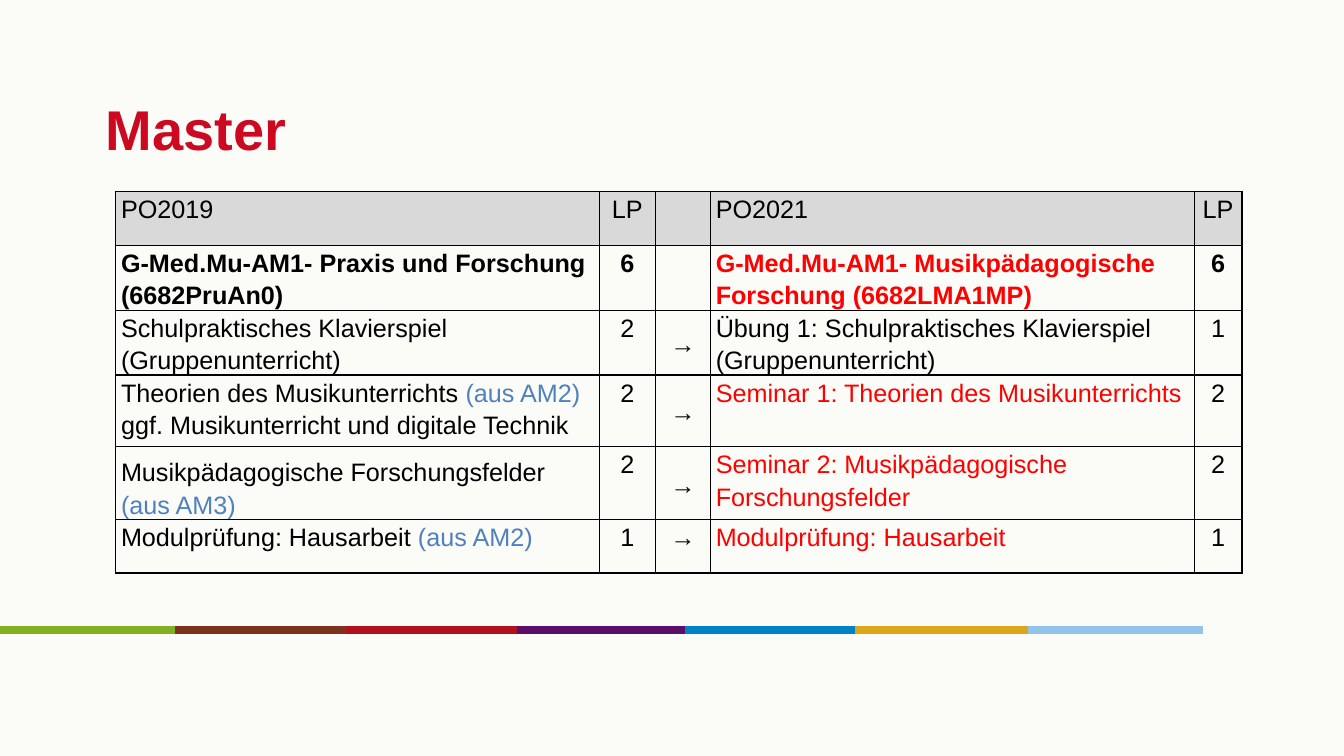
from dataclasses import dataclass
from typing import Any

from lxml import etree
from pptx import Presentation
from pptx.dml.color import RGBColor
from pptx.enum.shapes import MSO_CONNECTOR
from pptx.enum.text import MSO_ANCHOR, PP_ALIGN
from pptx.oxml.ns import qn
from pptx.util import Cm, Pt

STRAIGHT = MSO_CONNECTOR.STRAIGHT
LEFT, CENTER = PP_ALIGN.LEFT, PP_ALIGN.CENTER
TOP, MIDDLE, BOTTOM = MSO_ANCHOR.TOP, MSO_ANCHOR.MIDDLE, MSO_ANCHOR.BOTTOM


@dataclass(frozen=True)
class Theme:
    font: str = "Arial"
    title_size: float = 40
    body_size: float = 18
    line_spacing: float = 1.15
    border_width: float = 1
    stripe_width: float = 5.5
    background: str = "FBFCF8"
    title: str = "CD0921"
    text: str = "000000"
    changed: str = "FF0000"
    origin: str = "4F81BD"
    header: str = "D9D9D9"


@dataclass(frozen=True)
class Span:
    text: str
    color: str
    bold: bool = False
    break_after: bool = False


@dataclass(frozen=True)
class ModuleRow:
    height: float
    old: list[Span]
    old_points: str
    arrow: str
    new: list[Span]
    new_points: str
    bold: bool = False
    fill: str | None = None
    old_anchor: Any = TOP
    arrow_anchor: Any = MIDDLE


@dataclass(frozen=True)
class Stripe:
    left: float
    color: str


THEME = Theme()
COLUMN_WIDTHS = [12.19, 1.4, 1.4, 12.19, 1.2]
COLUMN_ALIGNMENTS = [LEFT, CENTER, CENTER, LEFT, CENTER]
STRIPE_TOP, STRIPE_LENGTH = 15.88, 4.4

STRIPES = [
    Stripe(0, "83AF23"),
    Stripe(4.42, "7D321D"),
    Stripe(8.71, "AF111D"),
    Stripe(13.03, "590F68"),
    Stripe(17.27, "0082C6"),
    Stripe(21.54, "DBA619"),
    Stripe(25.91, "91C4EA"),
]

MODULES = [
    ModuleRow(1.35, [Span("PO2019", THEME.text)], "LP", "",
              [Span("PO2021", THEME.text)], "LP", fill=THEME.header),
    ModuleRow(1.37, [Span("G-Med.Mu-AM1- Praxis und Forschung (6682PruAn0)", THEME.text, True)],
              "6", "",
              [Span("G-Med.Mu-AM1- Musikpädagogische Forschung (6682LMA1MP)",
                    THEME.changed, True)],
              "6", bold=True),
    ModuleRow(1.37, [Span("Schulpraktisches Klavierspiel (Gruppenunterricht)", THEME.text)],
              "2", "→",
              [Span("Übung 1: Schulpraktisches Klavierspiel (Gruppenunterricht)", THEME.text)],
              "1"),
    ModuleRow(1.81, [Span("Theorien des Musikunterrichts ", THEME.text),
                     Span("(aus AM2)", THEME.origin, break_after=True),
                     Span("ggf. Musikunterricht und digitale Technik", THEME.text)],
              "2", "→",
              [Span("Seminar 1: Theorien des Musikunterrichts", THEME.changed)], "2"),
    ModuleRow(1.83, [Span("Musikpädagogische Forschungsfelder ", THEME.text),
                     Span("(aus AM3)", THEME.origin)],
              "2", "→",
              [Span("Seminar 2: Musikpädagogische Forschungsfelder", THEME.changed)], "2",
              old_anchor=BOTTOM),
    ModuleRow(1.35, [Span("Modulprüfung: Hausarbeit ", THEME.text),
                     Span("(aus AM2)", THEME.origin)],
              "1", "→",
              [Span("Modulprüfung: Hausarbeit", THEME.changed)], "1", arrow_anchor=TOP),
]


def apply(target: Any, values: dict[str, Any]) -> None:
    for name, value in values.items():
        setattr(target, name, value)


def add_run(p: Any, span: Span, size: float) -> None:
    r = p.add_run()
    r.text = span.text
    apply(r.font, {"name": THEME.font, "size": Pt(size), "bold": span.bold})
    r.font.color.rgb = RGBColor.from_string(span.color)
    if span.break_after:
        p.add_line_break()


def add_title(s: Any, text: str) -> None:
    sp = s.shapes.title
    apply(sp, {"left": Cm(2.54), "top": Cm(1.65), "width": Cm(28.78), "height": Cm(3.18)})
    tf = sp.text_frame
    apply(tf, {"vertical_anchor": MIDDLE, "word_wrap": True,
               "margin_left": Cm(0.13), "margin_right": Cm(0.13),
               "margin_top": Cm(0.13), "margin_bottom": Cm(0.13)})
    p = tf.paragraphs[0]
    p.alignment = LEFT
    add_run(p, Span(text, THEME.title, True), THEME.title_size)


def add_stripe(s: Any, stripe: Stripe) -> None:
    line = s.shapes.add_connector(STRAIGHT, Cm(stripe.left), Cm(STRIPE_TOP),
                                  Cm(stripe.left + STRIPE_LENGTH), Cm(STRIPE_TOP))
    line.line.width = Pt(THEME.stripe_width)
    line.line.color.rgb = RGBColor.from_string(stripe.color)
    etree.SubElement(line._element.spPr, qn("a:effectLst"))


def add_borders(cell: Any) -> None:
    tc_pr = cell._tc.get_or_add_tcPr()
    for side in ("a:lnL", "a:lnR", "a:lnT", "a:lnB"):
        ln = etree.SubElement(tc_pr, qn(side), w=str(Pt(THEME.border_width)))
        fill = etree.SubElement(ln, qn("a:solidFill"))
        etree.SubElement(fill, qn("a:srgbClr"), val=THEME.text)


def fill_cell(cell: Any, spans: list[Span], alignment: Any, anchor: Any,
              fill: str | None) -> None:
    apply(cell, {"margin_left": Cm(0.13), "margin_right": Cm(0.13),
                 "margin_top": 0, "margin_bottom": 0, "vertical_anchor": anchor})
    add_borders(cell)
    if fill:
        cell.fill.solid()
        cell.fill.fore_color.rgb = RGBColor.from_string(fill)
    else:
        cell.fill.background()
    p = cell.text_frame.paragraphs[0]
    apply(p, {"alignment": alignment, "line_spacing": THEME.line_spacing})
    for span in spans:
        add_run(p, span, THEME.body_size)


def add_module_table(s: Any, modules: list[ModuleRow]) -> None:
    frame = s.shapes.add_table(len(modules), len(COLUMN_WIDTHS), Cm(2.92), Cm(4.83),
                               Cm(sum(COLUMN_WIDTHS)), Cm(sum(m.height for m in modules)))
    table = frame.table
    apply(table, {"first_row": False, "horz_banding": False})
    for column, width in zip(table.columns, COLUMN_WIDTHS):
        column.width = Cm(width)
    for row, module in zip(table.rows, modules):
        row.height = Cm(module.height)
        old_points, arrow, new_points = (
            [Span(text, THEME.text, module.bold)] if text else []
            for text in (module.old_points, module.arrow, module.new_points))
        contents = [module.old, old_points, arrow, module.new, new_points]
        anchors = [module.old_anchor, TOP, module.arrow_anchor, TOP, TOP]
        for cell, spans, alignment, anchor in zip(row.cells, contents,
                                                  COLUMN_ALIGNMENTS, anchors):
            fill_cell(cell, spans, alignment, anchor, module.fill)


def main() -> None:
    prs = Presentation()
    apply(prs, {"slide_width": Cm(33.87), "slide_height": Cm(19.05)})
    s = prs.slides.add_slide(prs.slide_layouts[5])
    s.background.fill.solid()
    s.background.fill.fore_color.rgb = RGBColor.from_string(THEME.background)
    for stripe in STRIPES:
        add_stripe(s, stripe)
    add_title(s, "Master")
    add_module_table(s, MODULES)
    prs.save("out.pptx")


if __name__ == "__main__":
    main()
